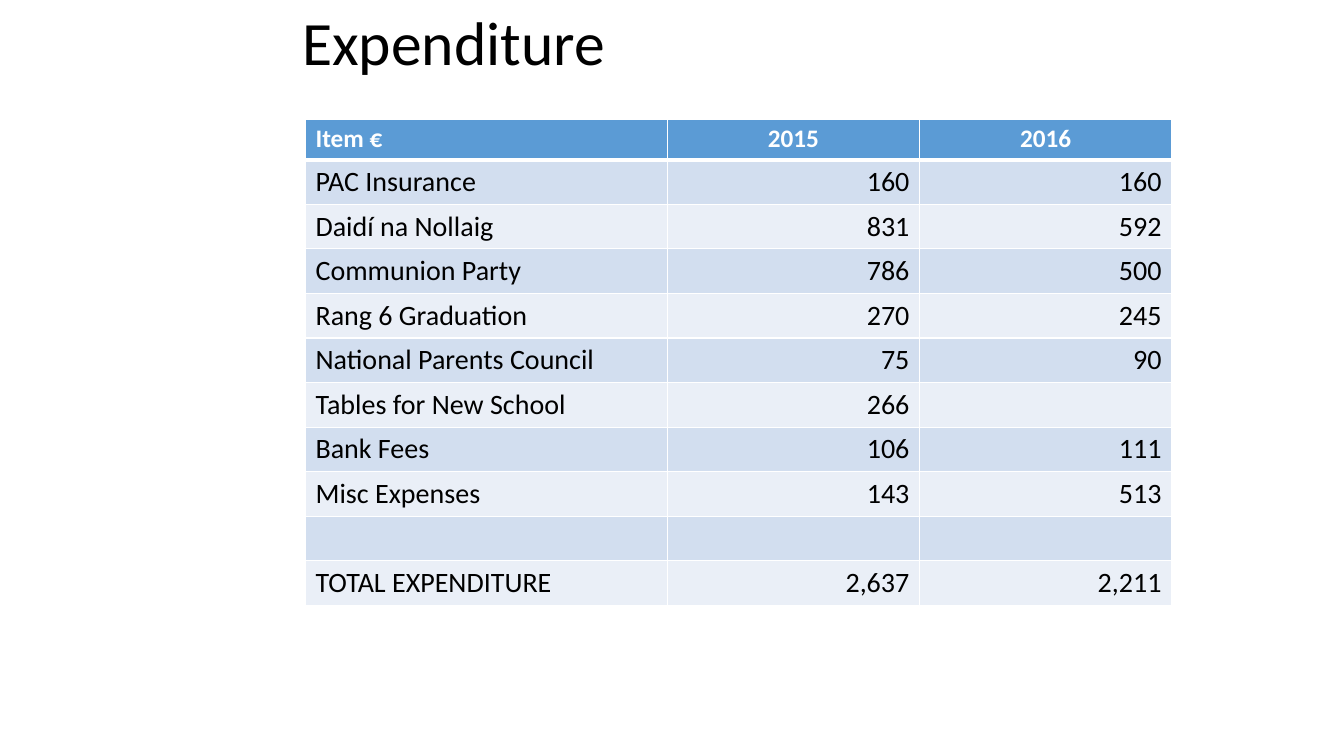
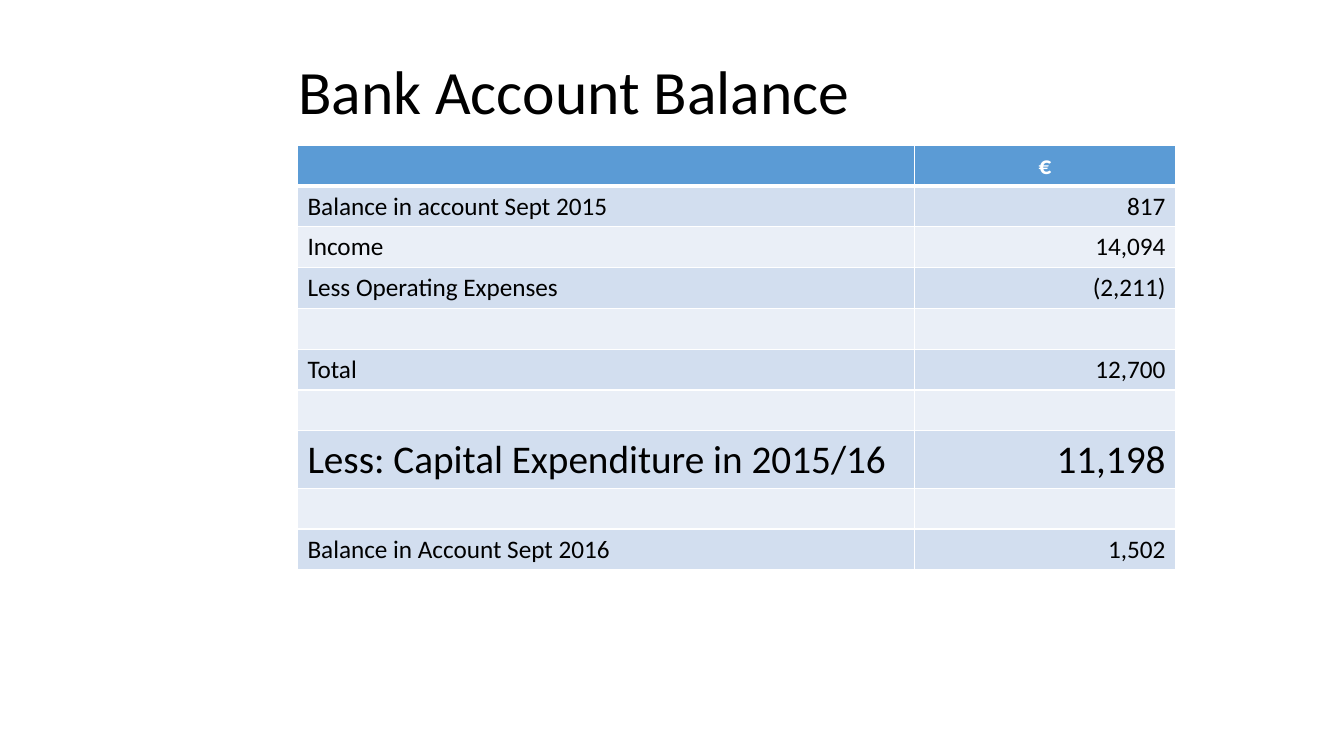
from pptx import Presentation
from pptx.dml.color import RGBColor as Rgb
from pptx.enum.text import MSO_ANCHOR as Anchor, PP_ALIGN as Align
from pptx.oxml import parse_xml
from pptx.oxml.ns import nsdecls
from pptx.util import Inches, Pt

HUES = {"head": "5B9BD5", "dark": "D2DEEF", "light": "EAEFF7",
        "ink": "000000", "paper": "FFFFFF"}
FONT = "Calibri"
HEAD, ROW, TALL = 5.4, 5.9, 7.6  # row heights, percent of slide height

# Boxes and columns are percent of slide width and height.
PAGES = [
    {"title": "Expenditure", "box": (21.75, -3.6, 67.6, 19.33),
     "at": (22.73, 15.73), "cols": (26.93, 18.76, 18.76),
     "row": ROW, "size": 20, "big": None,
     "data": [("Item €", "2015", "2016"),
              ("PAC Insurance", "160", "160"),
              ("Daidí na Nollaig", "831", "592"),
              ("Communion Party", "786", "500"),
              ("Rang 6 Graduation", "270", "245"),
              ("National Parents Council", "75", "90"),
              ("Tables for New School", "266", ""),
              ("Bank Fees", "106", "111"),
              ("Misc Expenses", "143", "513"),
              ("", "", ""),
              ("TOTAL EXPENDITURE", "2,637", "2,211")]},
    {"title": "Bank Account Balance", "box": (21.45, 5.33, 71.64, 14.27),
     "at": (22.13, 19.2), "cols": (45.91, 19.43),
     "row": HEAD, "size": 18, "big": 7,
     "data": [("", "€"),
              ("Balance in account Sept 2015", "817"),
              ("Income", "14,094"),
              ("Less Operating Expenses", "(2,211)"),
              ("", ""),
              ("Total", "12,700"),
              ("", ""),
              ("Less: Capital Expenditure in 2015/16", "11,198"),
              ("", ""),
              ("Balance in Account Sept 2016", "1,502")]},
]

deck = Presentation()
deck.slide_width, deck.slide_height = Inches(13.33), Inches(7.5)
wide, high = deck.slide_width / 100, deck.slide_height / 100


def write(para, text, size, hue, bold=False):
    run = para.add_run()
    run.text = text
    font = run.font
    font.name, font.size, font.bold = FONT, Pt(size), bold
    font.color.rgb = Rgb.from_string(HUES[hue])


def edge(cell, row):
    """Draw white cell borders, thick between the header and the body."""
    sides = {"L": 1, "R": 1, "T": 3 if row == 1 else 1, "B": 3 if row == 0 else 1}
    for side, width in sides.items():
        cell._tc.get_or_add_tcPr().append(parse_xml(
            f'<a:ln{side} {nsdecls("a")} w="{Pt(width)}"><a:solidFill>'
            f'<a:srgbClr val="{HUES["paper"]}"/></a:solidFill></a:ln{side}>'))


for page in PAGES:
    slide = deck.slides.add_slide(deck.slide_layouts[6])

    x, y, w, h = page["box"]
    frame = slide.shapes.add_textbox(
        int(x * wide), int(y * high), int(w * wide), int(h * high)).text_frame
    frame.word_wrap = True
    frame.vertical_anchor = Anchor.MIDDLE
    frame.paragraphs[0].line_spacing = 0.9
    write(frame.paragraphs[0], page["title"], 44, "ink")

    data, cols = page["data"], page["cols"]
    tall = [HEAD] + [page["row"]] * (len(data) - 1)
    if page["big"]:
        tall[page["big"]] = TALL
    x, y = page["at"]
    table = slide.shapes.add_table(
        len(data), len(cols), int(x * wide), int(y * high),
        int(sum(cols) * wide), int(sum(tall) * high)).table
    for col, w in zip(table.columns, cols):
        col.width = int(w * wide)

    for r, line in enumerate(data):
        table.rows[r].height = int(tall[r] * high)
        size = 18 if r == 0 else 28 if r == page["big"] else page["size"]
        fill = "head" if r == 0 else "dark" if r % 2 else "light"
        for c, text in enumerate(line):
            cell = table.cell(r, c)
            edge(cell, r)
            cell.fill.solid()
            cell.fill.fore_color.rgb = Rgb.from_string(HUES[fill])
            if text:
                para = cell.text_frame.paragraphs[0]
                if c:
                    para.alignment = Align.RIGHT if r else Align.CENTER
                write(para, text, size, "ink" if r else "paper", r == 0)

deck.save("out.pptx")
